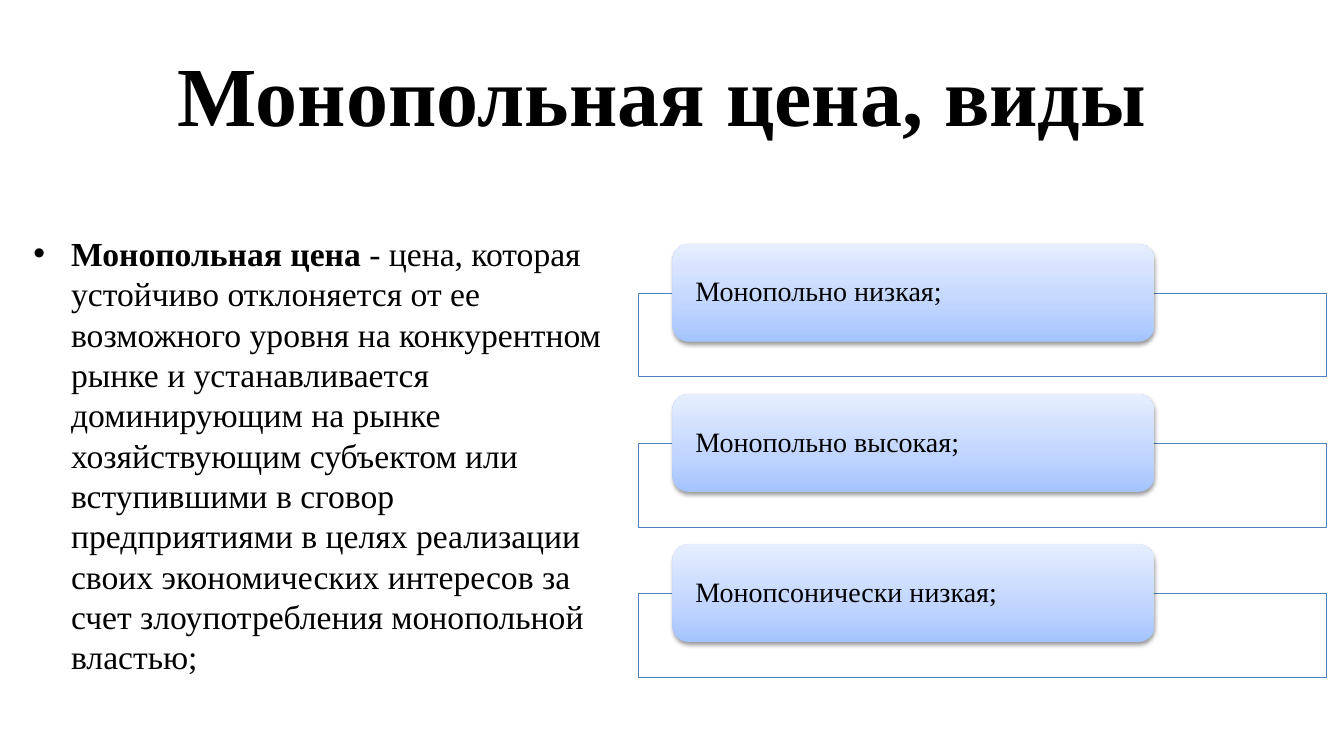
from dataclasses import dataclass

from lxml import etree
from pptx import Presentation
from pptx.dml.color import RGBColor
from pptx.enum.shapes import MSO_SHAPE
from pptx.enum.text import MSO_ANCHOR, MSO_AUTO_SIZE, PP_ALIGN
from pptx.oxml import parse_xml
from pptx.oxml.ns import nsdecls, qn
from pptx.util import Pt

RECTANGLE = MSO_SHAPE.RECTANGLE
ROUNDED = MSO_SHAPE.ROUNDED_RECTANGLE
MIDDLE = MSO_ANCHOR.MIDDLE
NO_AUTOFIT = MSO_AUTO_SIZE.NONE
LEFT, CENTER = PP_ALIGN.LEFT, PP_ALIGN.CENTER
TITLE_AND_CONTENT = 1
EMU_PER_PX = 9144  # 100 px to the inch


@dataclass(frozen=True)
class Theme:
    font: str = "Times New Roman"
    text: str = "000000"
    frame_fill: str = "FFFFFF"
    frame_line: str = "4F81BD"
    card_stops: tuple = ((0, "A4C4FF"), (35, "BFD4FF"), (100, "E6EEFF"))
    title_size: int = 60
    body_size: int = 24
    card_size: int = 20


THEME = Theme()
TITLE = "Монопольная цена, виды "
TERM = "Монопольная цена "
DEFINITION = (
    "- цена, которая устойчиво отклоняется от ее возможного уровня на "
    "конкурентном рынке и устанавливается доминирующим на рынке "
    "хозяйствующим субъектом или вступившими в сговор предприятиями в целях "
    "реализации своих экономических интересов за счет злоупотребления "
    "монопольной властью;"
)
PRICE_KINDS = ("Монопольно низкая;", "Монопольно высокая;", "Монопсонически низкая;")
FIRST_CARD_TOP, CARD_STEP, FRAME_DROP = 242, 149, 49


def px(*lengths):
    return [length * EMU_PER_PX for length in lengths]


def place(shape, *bounds):
    shape.left, shape.top, shape.width, shape.height = px(*bounds)


def style(para, size, bold=None):
    font = para.font
    font.name, font.size, font.bold = THEME.font, Pt(size), bold
    font.color.rgb = RGBColor.from_string(THEME.text)


def add_title(page):
    title = page.shapes.title
    place(title, 67, 30, 1200, 125)
    title.text_frame.auto_size = NO_AUTOFIT
    title.text_frame.vertical_anchor = MIDDLE
    para = title.text_frame.paragraphs[0]
    para.text, para.alignment = TITLE, CENTER
    style(para, THEME.title_size, bold=True)


def add_definition(page):
    body = page.placeholders[1]
    place(body, 23, 226, 605, 476)
    body.text_frame.auto_size = NO_AUTOFIT
    para = body.text_frame.paragraphs[0]
    style(para, THEME.body_size)
    for text, bold in ((TERM, True), (DEFINITION, False)):
        span = para.add_run()
        span.text, span.font.bold = text, bold


def add_frame(page, top):
    frame = page.shapes.add_shape(RECTANGLE, *px(633, top, 683, 83))
    frame.shadow.inherit = False
    frame.fill.solid()
    frame.fill.fore_color.rgb = RGBColor.from_string(THEME.frame_fill)
    color = frame.fill._xPr.find(qn("a:solidFill"))[0]
    etree.SubElement(color, qn("a:alpha"), val="90000")
    frame.line.color.rgb = RGBColor.from_string(THEME.frame_line)
    frame.line.width = Pt(0.75)


def set_card_gradient(card):
    """Fill with the theme's three stops, lightest at the top."""
    card.fill.gradient()
    card.fill.gradient_angle = 90
    stops = card.fill._xPr.find(qn("a:gradFill")).find(qn("a:gsLst"))
    for stop in list(stops):
        stops.remove(stop)
    for percent, color in THEME.card_stops:
        stop = etree.SubElement(stops, qn("a:gs"), pos=str(percent * 1000))
        etree.SubElement(stop, qn("a:srgbClr"), val=color)


def set_card_shadow(card):
    card.shadow.inherit = False
    effects = card._element.spPr.find(qn("a:effectLst"))
    effects.append(parse_xml(
        f'<a:outerShdw {nsdecls("a")} blurRad="{Pt(3.1)}" dist="{Pt(1.6)}" '
        f'dir="5400000" rotWithShape="0"><a:srgbClr val="{THEME.text}">'
        '<a:alpha val="38000"/></a:srgbClr></a:outerShdw>'
    ))


def add_card(page, top, text):
    card = page.shapes.add_shape(ROUNDED, *px(667, top, 478, 97))
    set_card_gradient(card)
    card.line.fill.background()
    set_card_shadow(card)
    box = card.text_frame
    box.word_wrap, box.vertical_anchor = True, MIDDLE
    box.margin_left, box.margin_top, box.margin_right, box.margin_bottom = px(18, 0, 18, 0)
    para = box.paragraphs[0]
    para.text, para.alignment, para.line_spacing = text, LEFT, 0.9
    style(para, THEME.card_size)


def main():
    deck = Presentation()
    deck.slide_width, deck.slide_height = px(1333, 750)
    page = deck.slides.add_slide(deck.slide_layouts[TITLE_AND_CONTENT])
    add_title(page)
    add_definition(page)
    for index, kind in enumerate(PRICE_KINDS):
        top = FIRST_CARD_TOP + index * CARD_STEP
        add_frame(page, top + FRAME_DROP)
        add_card(page, top, kind)
    deck.save("out.pptx")


if __name__ == "__main__":
    main()
